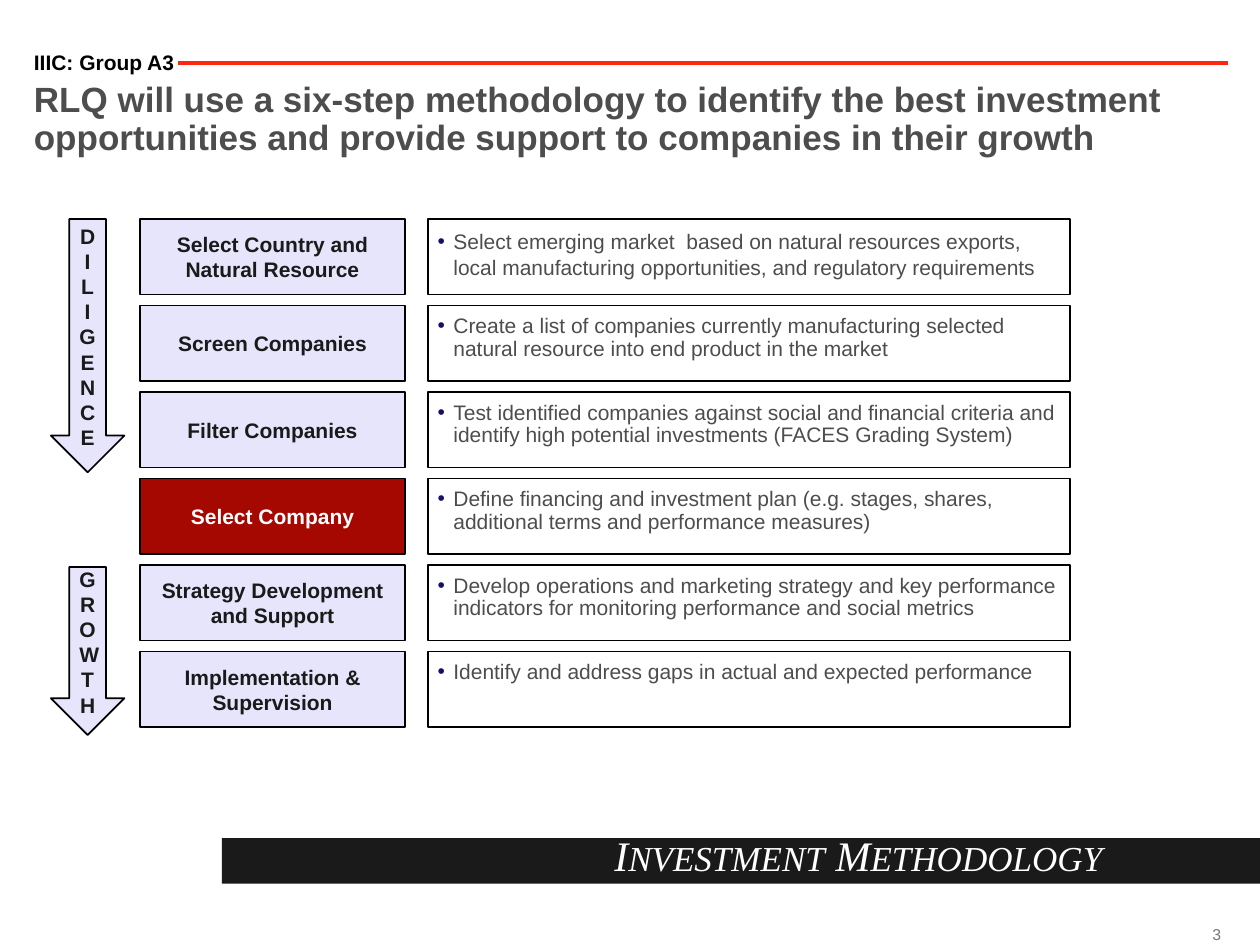
import pptx
import pptx.util
import pptx.dml.color
import pptx.enum.shapes
import pptx.enum.text
import pptx.oxml
import pptx.oxml.ns
import lxml.etree

Pt = pptx.util.Pt
RGBColor = pptx.dml.color.RGBColor
SHAPE = pptx.enum.shapes.MSO_SHAPE
ALIGN = pptx.enum.text.PP_ALIGN
ANCHOR = pptx.enum.text.MSO_ANCHOR
qn = pptx.oxml.ns.qn

BLACK = RGBColor(0x00, 0x00, 0x00)
WHITE = RGBColor(0xFF, 0xFF, 0xFF)
INK = RGBColor(0x1A, 0x1A, 0x1A)
GREY = RGBColor(0x4D, 0x4D, 0x4D)
PAGE_GREY = RGBColor(0x77, 0x78, 0x7B)
LAVENDER = RGBColor(0xE6, 0xE5, 0xFB)
DARK_RED = RGBColor(0xA4, 0x08, 0x00)
RULE_RED = RGBColor(0xFF, 0x27, 0x12)
BULLET_BLUE = RGBColor(0x14, 0x10, 0x66)

deck = pptx.Presentation()
deck.slide_width, deck.slide_height = Pt(720), Pt(540)
slide = deck.slides.add_slide(deck.slide_layouts[6])


def write(part, text, size, color, bold=False, align=ALIGN.LEFT,
          anchor=ANCHOR.TOP, inset=0, spacing=None):
    frame = part.text_frame
    frame.word_wrap = True
    frame.vertical_anchor = anchor
    frame.margin_left = frame.margin_right = Pt(inset)
    frame.margin_top = frame.margin_bottom = Pt(inset)
    frame.text = text
    for paragraph in frame.paragraphs:
        paragraph.alignment = align
        paragraph.line_spacing = spacing
        paragraph.font.name = "Arial"
        paragraph.font.size = Pt(size)
        paragraph.font.bold = bold
        paragraph.font.color.rgb = color
    return frame


def block(kind, left, top, width, height, fill, outlined=True):
    part = slide.shapes.add_shape(kind, Pt(left), Pt(top), Pt(width), Pt(height))
    part.shadow.inherit = False
    part.fill.solid()
    part.fill.fore_color.rgb = fill
    if outlined:
        part.line.color.rgb = BLACK
        part.line.width = Pt(1)
    else:
        part.line.fill.background()
    return part


page_number = slide.shapes.add_textbox(Pt(687), Pt(529), Pt(10.8), Pt(10))
write(page_number, "3", 9, PAGE_GREY, align=ALIGN.RIGHT,
      anchor=ANCHOR.MIDDLE).word_wrap = False

header_rule = slide.shapes.add_connector(
    pptx.enum.shapes.MSO_CONNECTOR.STRAIGHT, Pt(102), Pt(36), Pt(701.5), Pt(36))
header_rule.line.color.rgb = RULE_RED
header_rule.line.width = Pt(2.25)
lxml.etree.SubElement(header_rule._element.spPr, qn("a:effectLst"))

block(SHAPE.RECTANGLE, 126.8, 479, 593.2, 26, INK, outlined=False)

headline = slide.shapes.add_textbox(Pt(19.4), Pt(47), Pt(681), Pt(49))
write(headline, "RLQ will use a six-step methodology to identify the best "
      "investment opportunities and provide support to companies in their growth",
      20, GREY, bold=True, spacing=0.9)

steps = [
    ("Select Country and Natural Resource",
     "Select emerging market  based on natural resources exports, local "
     "manufacturing opportunities, and regulatory requirements"),
    ("Screen Companies",
     "Create a list of companies currently manufacturing selected natural "
     "resource into end product in the market"),
    ("Filter Companies",
     "Test identified companies against social and financial criteria and "
     "identify high potential investments (FACES Grading System)"),
    ("Select Company",
     "Define financing and investment plan (e.g. stages, shares, additional "
     "terms and performance measures)"),
    ("Strategy Development and Support",
     "Develop operations and marketing strategy and key performance "
     "indicators for monitoring performance and social metrics"),
    ("Implementation & Supervision",
     "Identify and address gaps in actual and expected performance"),
]
FIRST_TOP, PITCH, STEP_HEIGHT = 125.2, 49.43, 43.2

for index, (step, detail) in enumerate(steps):
    top = FIRST_TOP + index * PITCH
    detail_box = block(SHAPE.RECTANGLE, 244.5, top, 367.2, STEP_HEIGHT, WHITE)
    frame = write(detail_box, detail, 12, GREY, inset=5.6,
                  spacing=1.0 if index == 0 else 0.9)
    frame.margin_right = Pt(2.9)
    properties = frame.paragraphs[0]._p.get_or_add_pPr()
    properties.set("marL", str(Pt(9)))
    properties.set("indent", str(Pt(-9)))
    bullet_color = lxml.etree.SubElement(properties, qn("a:buClr"))
    lxml.etree.SubElement(bullet_color, qn("a:srgbClr"), val=str(BULLET_BLUE))
    lxml.etree.SubElement(properties, qn("a:buFont"), typeface="Arial")
    lxml.etree.SubElement(properties, qn("a:buChar"), char="•")
    properties.append(properties.find(qn("a:defRPr")))

    chosen = step == "Select Company"
    step_box = block(SHAPE.RECTANGLE, 80, top, 151.6, STEP_HEIGHT,
                     DARK_RED if chosen else LAVENDER)
    write(step_box, step, 12, WHITE if chosen else INK, bold=True,
          align=ALIGN.CENTER, anchor=ANCHOR.MIDDLE, inset=5.8)

for phase, top, height in [("DILIGENCE", FIRST_TOP, 144.7), ("GROWTH", 324, 96)]:
    phase_arrow = block(SHAPE.DOWN_ARROW, 29.1, top, 42, height, LAVENDER)
    write(phase_arrow, "\n".join(phase), 12, INK, bold=True,
          align=ALIGN.CENTER, anchor=ANCHOR.MIDDLE, inset=5.8)

section_name = slide.shapes.add_textbox(Pt(87.8), Pt(473.8), Pt(542.2), Pt(33))
section_line = write(section_name, "", 20, WHITE, align=ALIGN.RIGHT).paragraphs[0]
section_line.font.name = "Times New Roman"
section_line.font.italic = True
for letters, size in [("I", 24), ("NVESTMENT", 20), (" M", 24), ("ETHODOLOGY", 20)]:
    run = section_line.add_run()
    run.text = letters
    run.font.size = Pt(size)

group_label = slide.shapes.add_textbox(Pt(19.4), Pt(29.8), Pt(101.5), Pt(13))
write(group_label, "IIIC: Group A3", 12, BLACK, bold=True, spacing=0.9)

deck.save("out.pptx")
